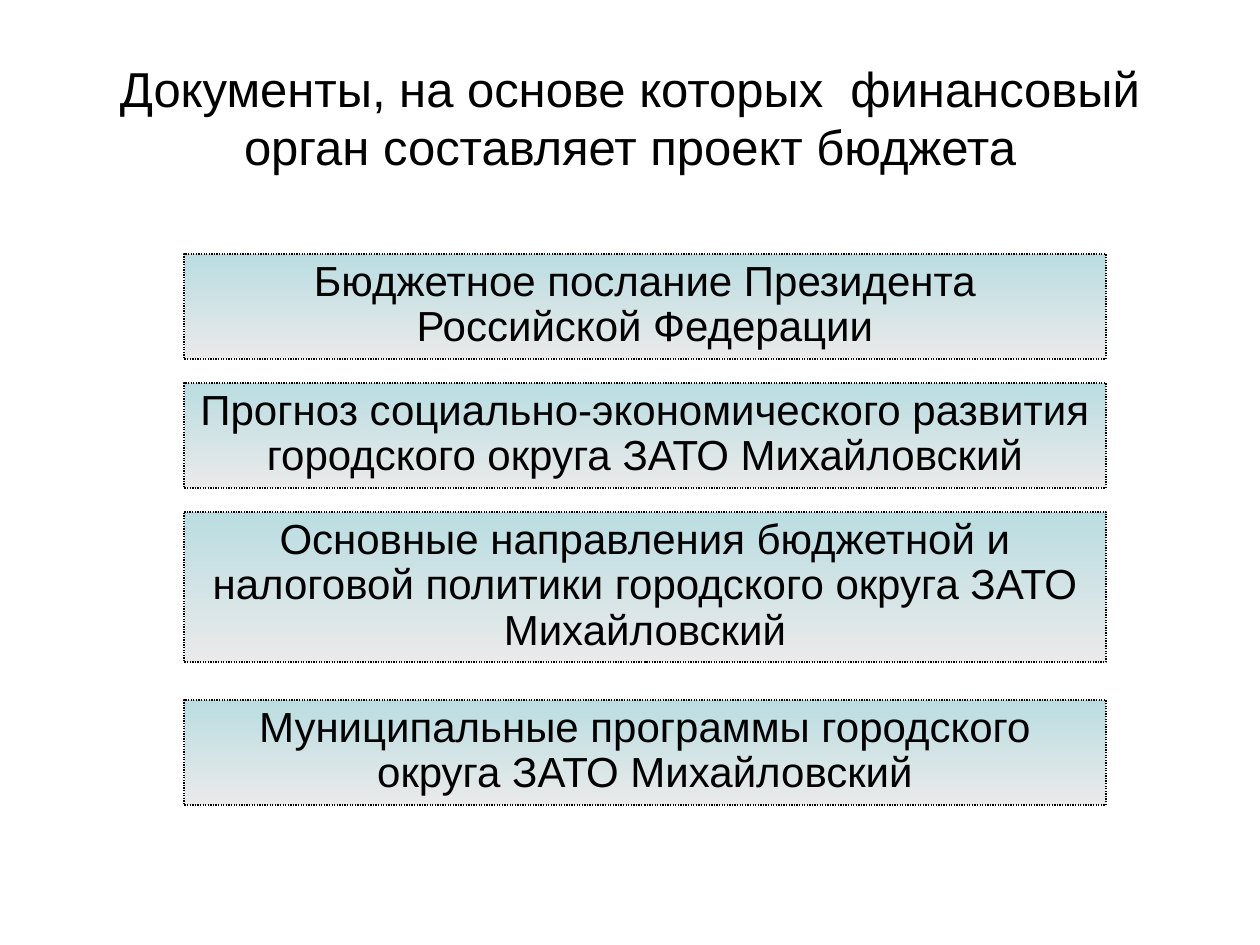
"""Build a slide listing the documents behind a draft budget."""
from dataclasses import dataclass

from pptx import Presentation
from pptx.dml.color import RGBColor as Color
from pptx.enum.dml import MSO_LINE as Dash
from pptx.enum.shapes import MSO_SHAPE as Preset
from pptx.enum.text import MSO_ANCHOR as Anchor, MSO_AUTO_SIZE as AutoSize, PP_ALIGN as Align
from pptx.util import Inches, Pt


@dataclass(frozen=True)
class Theme:
    font: str = "Arial"
    ink: Color = Color.from_string("000000")
    box_top: Color = Color.from_string("BADDE1")
    box_bottom: Color = Color.from_string("EAEAEA")
    title_size: int = 28
    box_size: int = 24
    outline: float = 0.75


THEME = Theme()
PX_PER_INCH = 126
BOX_LEFT, BOX_WIDTH = 184, 922
DOCUMENTS = [
    (254, 105, "Бюджетное послание Президента Российской Федерации"),
    (383, 105, "Прогноз социально-экономического развития городского округа ЗАТО Михайловский"),
    (512, 150, "Основные направления бюджетной и налоговой политики городского округа ЗАТО Михайловский"),
    (700, 105, "Муниципальные программы городского округа ЗАТО Михайловский"),
]


def px(length):
    return Inches(length / PX_PER_INCH)


def write(shape, text, size):
    frame = shape.text_frame
    frame.word_wrap = True
    frame.vertical_anchor = Anchor.MIDDLE
    paragraph = frame.paragraphs[0]
    paragraph.text = text
    paragraph.alignment = Align.CENTER
    paragraph.font.name = THEME.font
    paragraph.font.size = Pt(size)
    paragraph.font.color.rgb = THEME.ink
    return paragraph


presentation = Presentation()
presentation.slide_width, presentation.slide_height = px(1260), px(945)
slide = presentation.slides.add_slide(presentation.slide_layouts[5])

title = slide.shapes.title
title.left, title.top, title.width, title.height = px(63), px(38), px(1134), px(158)
write(title, "Документы, на основе которых  финансовый орган составляет проект бюджета", THEME.title_size)
title.text_frame.auto_size = AutoSize.NONE

for top, height, text in DOCUMENTS:
    box = slide.shapes.add_shape(Preset.RECTANGLE, px(BOX_LEFT), px(top), px(BOX_WIDTH), px(height))
    box.shadow.inherit = False
    box.fill.gradient()
    box.fill.gradient_angle = 270
    for stop, color in zip(box.fill.gradient_stops, (THEME.box_top, THEME.box_bottom)):
        stop.color.rgb = color
    box.line.color.rgb = THEME.ink
    box.line.width = Pt(THEME.outline)
    box.line.dash_style = Dash.ROUND_DOT
    paragraph = write(box, text, THEME.box_size)
    paragraph.line_spacing = 0.9
    box.text_frame.vertical_anchor = Anchor.TOP
    box.text_frame.auto_size = AutoSize.SHAPE_TO_FIT_TEXT

presentation.save("out.pptx")
